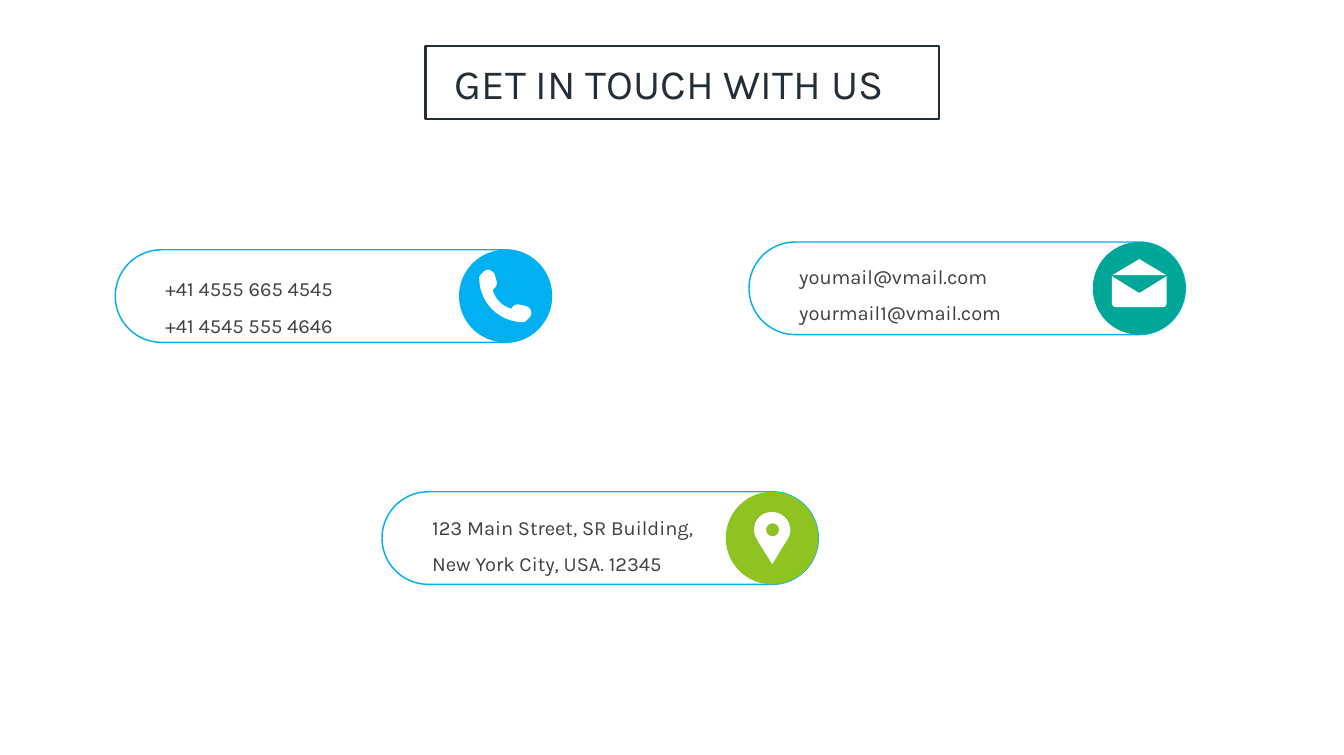
from pptx import Presentation
from pptx.dml.color import RGBColor
from pptx.enum.shapes import MSO_SHAPE
from pptx.enum.text import MSO_ANCHOR, MSO_AUTO_SIZE, PP_ALIGN
from pptx.util import Inches, Pt

COLS, ROWS = 26, 14.6
DISC = 1.79
PILL = 8.44

# Icon outlines, measured from the disc's corner: a pair is a straight
# step, six numbers are a Bezier step (two handles and an end point)
PHONE = [
    (1.37, 1.3), (1.29, 1.38), (1.28, 1.39, 1.24, 1.4, 1.24, 1.4),
    (1.02, 1.4, 0.8, 1.31, 0.64, 1.15), (0.48, 0.99, 0.39, 0.77, 0.39, 0.54),
    (0.39, 0.54, 0.4, 0.5, 0.41, 0.49), (0.48, 0.42),
    (0.51, 0.39, 0.56, 0.38, 0.59, 0.39), (0.61, 0.4),
    (0.64, 0.41, 0.68, 0.45, 0.69, 0.48), (0.73, 0.62),
    (0.74, 0.65, 0.72, 0.7, 0.7, 0.73), (0.65, 0.78),
    (0.7, 0.95, 0.83, 1.09, 1.01, 1.14), (1.05, 1.09),
    (1.08, 1.06, 1.13, 1.05, 1.17, 1.06), (1.3, 1.09),
    (1.34, 1.1, 1.38, 1.14, 1.39, 1.18), (1.41, 1.23, 1.39, 1.28, 1.37, 1.3),
]
FLAP = [(0.9, 0.33), (1.42, 0.64), (0.38, 0.64)]
LETTER = [
    (1.43, 0.66), (1.43, 1.18), (1.43, 1.23, 1.4, 1.26, 1.34, 1.26),
    (0.46, 1.26), (0.41, 1.26, 0.37, 1.23, 0.37, 1.18), (0.37, 0.66),
    (0.87, 0.97), (0.89, 0.98, 0.91, 0.98, 0.93, 0.97),
]
PIN = [
    (1.23, 0.64), (1.23, 0.63, 1.22, 0.61, 1.22, 0.6),
    (1.15, 0.45, 1.01, 0.39, 0.89, 0.39), (0.74, 0.39, 0.57, 0.49, 0.55, 0.7),
    (0.55, 0.77), (0.56, 0.87, 0.64, 0.98, 0.7, 1.08), (0.9, 1.4),
    (1.08, 1.1), (1.15, 0.98, 1.25, 0.87, 1.25, 0.75), (1.25, 0.7),
]


def color(code):
    return RGBColor.from_string(code)


def trace(steps, parts=8):
    """Turn straight and Bezier steps into a list of points."""
    points = [steps[0]]
    for step in steps[1:]:
        if len(step) == 2:
            points.append(step)
            continue
        nodes = [points[-1], step[:2], step[2:4], step[4:]]
        for i in range(1, parts + 1):
            t = i / parts
            mix = ((1 - t) ** 3, 3 * t * (1 - t) ** 2, 3 * t * t * (1 - t), t ** 3)
            points.append(tuple(sum(m * n[k] for m, n in zip(mix, nodes))
                                for k in (0, 1)))
    return points


class Deck:
    font = "Karla"
    dark, grey, blue, white = "242E38", "404040", "00B0F0", "FFFFFF"

    def __init__(self):
        self.prs = Presentation()
        self.prs.slide_width, self.prs.slide_height = Inches(COLS), Inches(ROWS)
        self.slide = self.prs.slides.add_slide(self.prs.slide_layouts[5])
        self.shapes = self.slide.shapes

    def grid(self, *cells):
        """Lengths in columns and rows, taken in turn."""
        units = (self.prs.slide_width / COLS, self.prs.slide_height / ROWS)
        return [round(cell * units[i % 2]) for i, cell in enumerate(cells)]

    def place(self, shape, *cells):
        shape.left, shape.top, shape.width, shape.height = self.grid(*cells)

    def paint(self, shape, fill=None, line=None, width=2):
        shape.shadow.inherit = False
        if fill:
            shape.fill.solid()
            shape.fill.fore_color.rgb = color(fill)
        else:
            shape.fill.background()
        if line:
            shape.line.color.rgb = color(line)
            shape.line.width = Pt(width)
        else:
            shape.line.fill.background()

    def style(self, para, size, code):
        para.alignment = PP_ALIGN.LEFT
        para.font.name, para.font.size = self.font, Pt(size)
        para.font.color.rgb = color(code)

    def title(self, text, *cells):
        box = self.shapes.title
        self.place(box, *cells)
        box.line.color.rgb = color(self.dark)
        box.line.width = Pt(3)
        frame = box.text_frame
        frame.text = text
        frame.auto_size = MSO_AUTO_SIZE.NONE
        frame.vertical_anchor = MSO_ANCHOR.MIDDLE
        frame.margin_left = Inches(0.57)
        self.style(frame.paragraphs[0], 58, self.dark)

    def pill(self, x, y):
        shape = self.shapes.add_shape(MSO_SHAPE.ROUNDED_RECTANGLE,
                                      *self.grid(x, y, PILL, DISC))
        shape.adjustments[0] = 0.5
        self.paint(shape, line=self.blue)

    def disc(self, x, y, size, fill):
        shape = self.shapes.add_shape(MSO_SHAPE.OVAL, *self.grid(x, y, size, size))
        self.paint(shape, fill)

    def icon(self, x, y, steps):
        points = [self.grid(x + px, y + py) for px, py in trace(steps)]
        pen = self.shapes.build_freeform(*points[0])
        pen.add_line_segments(points[1:], close=True)
        self.paint(pen.convert_to_shape(), self.white)

    def lines(self, x, y, texts):
        box = self.shapes.add_textbox(*self.grid(x, y, 5.68, 1.61))
        frame = box.text_frame
        frame.word_wrap = True
        frame.margin_left = frame.margin_right = Inches(0.19)
        frame.margin_top = frame.margin_bottom = Inches(0.1)
        frame.text = "\n".join(texts)
        for para in frame.paragraphs:
            self.style(para, 28, self.grey)
            para.line_spacing = 1.5

    def contact(self, x, y, shift, texts, fill, icons):
        """A pill with two lines of text and an icon disc at its right end."""
        end = x + PILL - DISC
        self.pill(x, y)
        self.lines(x + 0.78, y + shift, texts)
        self.disc(end, y, DISC, fill)
        for steps in icons:
            self.icon(end, y, steps)
        return end


def main():
    deck = Deck()

    # Framed title
    deck.title("GET IN TOUCH WITH US", 8.23, 0.89, 9.94, 1.41)

    # Phone, mail and address
    deck.contact(2.23, 4.83, 0.19, ["+41 4555 665 4545", "+41 4545 555 4646"],
                 "00B0F0", [PHONE])
    deck.contact(14.49, 4.68, 0.09, ["youmail@vmail.com", "yourmail1@vmail.com"],
                 "00A698", [FLAP, LETTER])
    end = deck.contact(7.39, 9.51, 0.12,
                       ["123 Main Street, SR Building,", "New York City, USA. 12345"],
                       "8FC321", [PIN])

    # Eye of the map pin
    deck.disc(end + 0.78, 9.51 + 0.61, 0.25, "8FC321")

    deck.prs.save("out.pptx")


if __name__ == "__main__":
    main()
